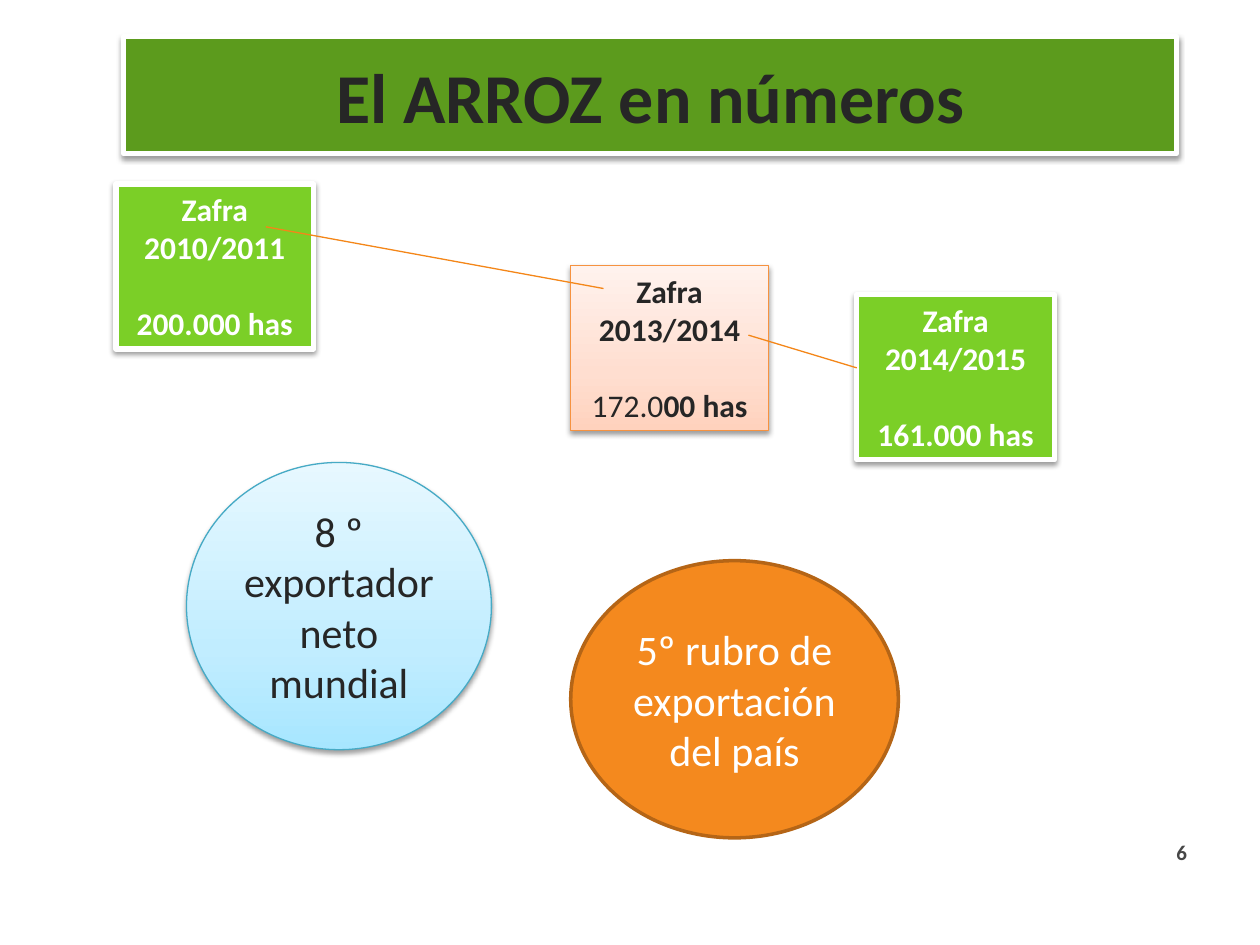
from copy import deepcopy

from lxml import etree
from pptx import Presentation
from pptx.dml.color import RGBColor
from pptx.enum.shapes import MSO_CONNECTOR, MSO_SHAPE
from pptx.enum.text import MSO_ANCHOR, PP_ALIGN
from pptx.oxml import parse_xml
from pptx.oxml.ns import nsdecls, qn
from pptx.util import Inches, Pt

RECT, OVAL = MSO_SHAPE.RECTANGLE, MSO_SHAPE.OVAL
STRAIGHT = MSO_CONNECTOR.STRAIGHT
TOP, MIDDLE = MSO_ANCHOR.TOP, MSO_ANCHOR.MIDDLE
CENTER, RIGHT = PP_ALIGN.CENTER, PP_ALIGN.RIGHT

WHITE = RGBColor(0xFF, 0xFF, 0xFF)
DARK = RGBColor(0x26, 0x26, 0x26)
GREY = RGBColor(0x47, 0x47, 0x47)
DARK_GREEN = RGBColor(0x5C, 0x9B, 0x1D)
GREEN = RGBColor(0x7B, 0xCF, 0x27)
ORANGE = RGBColor(0xF4, 0x89, 0x1E)
BROWN = RGBColor(0xB5, 0x65, 0x16)
LINK_ORANGE = RGBColor(0xF4, 0x86, 0x18)
PEACH_EDGE = RGBColor(0xF6, 0x92, 0x40)
BLUE_EDGE = RGBColor(0x46, 0xAA, 0xC5)
PEACH = [RGBColor(0xFF, 0xD2, 0xBD), RGBColor(0xFF, 0xDE, 0xD0), RGBColor(0xFF, 0xF2, 0xED)]
SKY = [RGBColor(0xA7, 0xE6, 0xFF), RGBColor(0xC1, 0xED, 0xFF), RGBColor(0xE7, 0xF8, 0xFF)]
STOPS = (0, 0.35, 1)

SHADOW = (
    f'<a:outerShdw {nsdecls("a")} blurRad="{Pt(3.1)}" dist="{Pt(1.6)}" dir="5400000" '
    'rotWithShape="0"><a:srgbClr val="000000"><a:alpha val="38000"/></a:srgbClr></a:outerShdw>'
)


def set_gradient(sp, colors):
    """Fill a shape with a three-stop gradient that rises from its bottom edge."""
    sp.fill.gradient()
    sp.fill.gradient_angle = 90
    stop_list = sp._element.spPr.find(qn("a:gradFill")).find(qn("a:gsLst"))
    stop_list.append(deepcopy(stop_list[-1]))
    for stop, position, color in zip(sp.fill.gradient_stops, STOPS, colors):
        stop.position = position
        stop.color.rgb = color


def add_box(s, kind, box, fill, edge, width, shadow=True):
    """Add a filled, outlined shape with an optional soft shadow."""
    sp = s.shapes.add_shape(kind, *map(Inches, box))
    if isinstance(fill, list):
        set_gradient(sp, fill)
    else:
        sp.fill.solid()
        sp.fill.fore_color.rgb = fill
    sp.line.color.rgb = edge
    sp.line.width = Pt(width)
    sp.shadow.inherit = False
    if shadow:
        sp._element.spPr.find(qn("a:effectLst")).append(parse_xml(SHADOW))
    return sp


def style(p, size, color, bold=None, align=CENTER):
    """Set the font and alignment of a paragraph."""
    p.alignment = align
    p.font.name = "Calibri"
    p.font.size = Pt(size)
    p.font.color.rgb = color
    p.font.bold = bold


def write(sp, text, size, color, bold=False, align=CENTER):
    """Put one vertically centred paragraph in a shape."""
    tf = sp.text_frame
    tf.word_wrap = True
    tf.vertical_anchor = MIDDLE
    p = tf.paragraphs[0]
    p.text = text
    style(p, size, color, bold, align)


def add_title(s, box, text):
    """Place the title banner."""
    write(add_box(s, RECT, box, DARK_GREEN, WHITE, 3), text, 40, DARK, True)


def add_harvest(s, box, season, area, fill=GREEN, edge=WHITE, width=3, color=WHITE):
    """Place a harvest card; area lists (text, bold) runs."""
    tf = add_box(s, RECT, box, fill, edge, width).text_frame
    tf.word_wrap = True
    tf.vertical_anchor = TOP
    p = tf.paragraphs[0]
    p.text = season
    style(p, 18, color, True)
    p = tf.add_paragraph()
    p.space_before = Pt(22)
    style(p, 18, color)
    for text, bold in area:
        r = p.add_run()
        r.text = text
        r.font.bold = bold


def add_link(s, start, end):
    """Draw a thin line between two harvest cards."""
    line = s.shapes.add_connector(STRAIGHT, *map(Inches, start + end))
    line.line.color.rgb = LINK_ORANGE
    line.line.width = Pt(0.75)
    etree.SubElement(line._element.spPr, qn("a:effectLst"))


def add_ranking(s, box, text, fill, edge, width, color, shadow):
    """Place a ranking ellipse."""
    write(add_box(s, OVAL, box, fill, edge, width, shadow), text, 24, color)


def add_page_number(s, box, number):
    """Place the page number."""
    write(s.shapes.add_textbox(*map(Inches, box)), number, 12, GREY, True, RIGHT)


def main():
    """Build the slide and save it."""
    prs = Presentation()
    prs.slide_width, prs.slide_height = Inches(10), Inches(7.5)
    s = prs.slides.add_slide(prs.slide_layouts[6])
    card = (1.57, 1.31)
    add_title(s, (0.98, 0.29, 8.36, 0.93), "El ARROZ en números")
    add_harvest(s, (0.92, 1.46, *card), "Zafra 2010/2011", [("200.000 has", True)])
    add_harvest(s, (4.53, 2.11, *card), "Zafra 2013/2014",
                [("172.0", False), ("00 has", True)], PEACH, PEACH_EDGE, 0.75, DARK)
    add_harvest(s, (6.8, 2.34, *card), "Zafra 2014/2015", [("161.000 has", True)])
    add_link(s, (2.11, 1.8), (4.79, 2.29))
    add_link(s, (5.94, 2.66), (6.8, 2.92))
    add_ranking(s, (1.48, 3.67, 2.42, 2.28), "8 º exportador neto mundial",
                SKY, BLUE_EDGE, 0.75, DARK, True)
    add_ranking(s, (4.53, 4.45, 2.6, 2.2), "5º rubro de exportación del país",
                ORANGE, BROWN, 2, WHITE, False)
    add_page_number(s, (7.19, 6.56, 2.33, 0.4), "6")
    prs.save("out.pptx")


if __name__ == "__main__":
    main()
